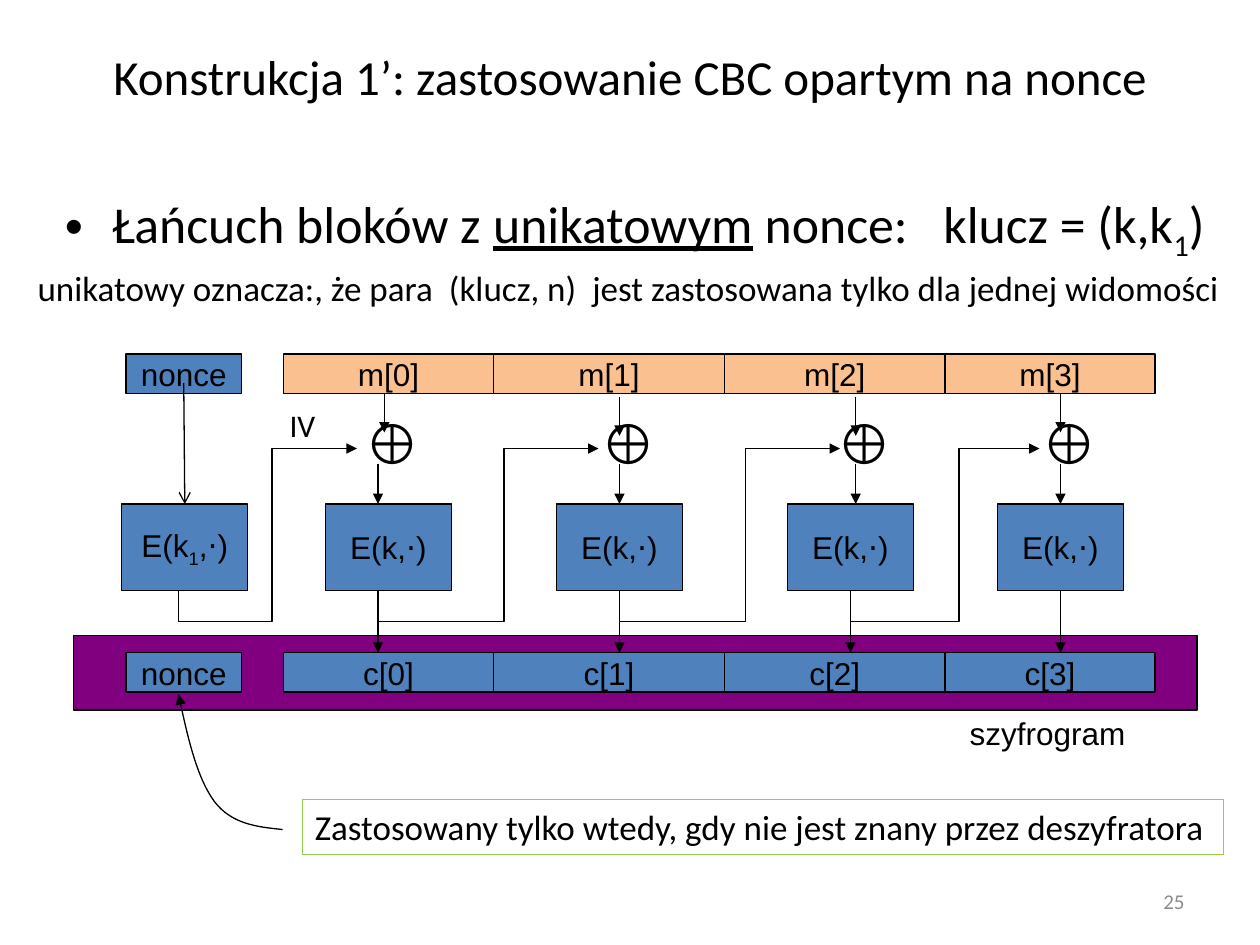
from dataclasses import dataclass
from lxml.etree import SubElement
from pptx import Presentation
from pptx.dml.color import RGBColor
from pptx.enum.shapes import MSO_CONNECTOR as Connector, MSO_SHAPE as Shape
from pptx.enum.text import MSO_ANCHOR as Anchor, MSO_AUTO_SIZE as AutoSize, PP_ALIGN as Align
from pptx.oxml.ns import qn
from pptx.util import Pt

BLUE, ORANGE, PURPLE, GREEN = "4F81BD", "FAC090", "800080", "92D050"
BLACK, GREY = "000000", "8C8C8C"
BLOCK_TOP, BLOCK_HEIGHT, BLOCK_WIDTH = 288, 49.5, 72
CELL_HEIGHT, MESSAGE_TOP, CIPHER_TOP = 22.5, 202.3, 373
XOR_LEVEL, FEED_LEVEL = 256.3, 355.2


@dataclass
class Span:
    text: str
    underline: bool = False
    subscript: bool = False
    spacing: float = 0


@dataclass
class Frame:
    left: float
    top: float
    width: float
    height: float


@dataclass
class Stage:
    """One column of the chain; all values are horizontal places."""
    cell_left: float
    cell_width: float
    block_left: float
    xor_left: float
    message_x: float
    message_y: float
    block_x: float
    cipher_x: float


STAGES = [
    Stage(162, 120, 186, 201, 219.6, 224.8, 216, 216),
    Stage(282, 132, 318, 336, 354, 226.8, 354, 354),
    Stage(414, 126, 450, 471, 489, 226.8, 489, 486),
    Stage(540, 120, 570, 588, 606, 224.8, 606, 606),
]


def colour(value: str) -> RGBColor:
    return RGBColor.from_string(value)


def write(box, spans: list[Span], size: float, font: str = "Arial", ink: str = BLACK,
          align=Align.LEFT, anchor=Anchor.TOP, wrap: bool = False, grow: bool = False):
    frame = box.text_frame
    frame.word_wrap = wrap
    frame.vertical_anchor = anchor
    frame.auto_size = AutoSize.SHAPE_TO_FIT_TEXT if grow else AutoSize.NONE
    para = frame.paragraphs[0]
    para.alignment = align
    for span in spans:
        run = para.add_run()
        run.text = span.text
        run.font.size, run.font.name = Pt(size), font
        run.font.color.rgb = colour(ink)
        run.font.underline = span.underline
        if span.subscript:
            run.font._element.set("baseline", "-25000")
        if span.spacing:
            run.font._element.set("spc", str(round(span.spacing * 100)))
    return para


def add_label(page, frame: Frame, spans: list[Span], size: float, **style):
    box = page.shapes.add_textbox(Pt(frame.left), Pt(frame.top), Pt(frame.width), Pt(frame.height))
    return write(box, spans, size, **style)


def add_box(page, frame: Frame, fill: str | None, line: str = BLACK):
    box = page.shapes.add_shape(Shape.RECTANGLE, Pt(frame.left), Pt(frame.top),
                                Pt(frame.width), Pt(frame.height))
    box.shadow.inherit = False
    if fill:
        box.fill.solid()
        box.fill.fore_color.rgb = colour(fill)
    else:
        box.fill.background()
    box.line.color.rgb, box.line.width = colour(line), Pt(0.75)
    return box


def add_block(page, frame: Frame, fill: str, *spans: Span) -> None:
    write(add_box(page, frame, fill), list(spans), 18, align=Align.CENTER, anchor=Anchor.MIDDLE)


def style_line(line, head: str | None) -> None:
    line.color.rgb, line.width = colour(BLACK), Pt(0.75)
    if head:
        SubElement(line._get_or_add_ln(), qn("a:tailEnd"), type=head)


def add_line(page, x1: float, y1: float, x2: float, y2: float, head: str | None = "triangle") -> None:
    link = page.shapes.add_connector(Connector.STRAIGHT, Pt(x1), Pt(y1), Pt(x2), Pt(y2))
    style_line(link.line, head)
    SubElement(link._element.spPr, qn("a:effectLst"))


def add_route(page, points: list[tuple[float, float]]):
    """Draw an open outline through the points, ending in an arrowhead."""
    start, *others = [(Pt(x), Pt(y)) for x, y in points]
    builder = page.shapes.build_freeform(*start)
    builder.add_line_segments(others, close=False)
    route = builder.convert_to_shape()
    route.shadow.inherit = False
    route.fill.background()
    style_line(route.line, "triangle")
    return route


def add_elbow(page, start: float, turn: float, end: float) -> None:
    add_route(page, [(start, FEED_LEVEL), (turn, FEED_LEVEL), (turn, XOR_LEVEL), (end, XOR_LEVEL)])


def add_curve(page, points: list[tuple[float, float]]) -> None:
    """Turn each three points after the first into one cubic Bezier segment."""
    outline = add_route(page, points)._element.find(".//" + qn("a:path"))
    steps = outline.findall(qn("a:lnTo"))
    for index in range(0, len(steps), 3):
        bezier = SubElement(outline, qn("a:cubicBezTo"))
        for step in steps[index:index + 3]:
            bezier.append(step[0])
            outline.remove(step)


def add_texts(page) -> None:
    add_label(page, Frame(36, 21.6, 648, 44), [Span("Konstrukcja 1’: zastosowanie CBC opartym na nonce")],
              28, font="Calibri", align=Align.CENTER, anchor=Anchor.MIDDLE, wrap=True)
    add_label(page, Frame(516, 500.5, 168, 28.8), [Span("25")], 12, font="Calibri", ink=GREY,
              align=Align.RIGHT, anchor=Anchor.MIDDLE, wrap=True)
    heading = add_label(page, Frame(30, 106, 690, 72), [
        Span("Łańcuch bloków z "), Span("unikatowym", underline=True), Span(" nonce:"),
        Span(" ", spacing=13.4), Span("klucz = (k,k"), Span("1", subscript=True), Span(")"),
    ], 29.6, font="Calibri", wrap=True)
    heading.space_before = Pt(6)
    props = heading._p.get_or_add_pPr()
    props.set("marL", str(Pt(27)))
    props.set("indent", str(-Pt(27)))
    SubElement(props, qn("a:buFont"), typeface="Arial")
    SubElement(props, qn("a:buChar"), char="•")
    wide = Span(" ", spacing=4.5)
    add_label(page, Frame(14.4, 148.5, 705.6, 31.5), [
        Span("unikatowy oznacza:, że para"), wide, Span("(klucz, n)"), wide,
        Span("jest zastosowana tylko dla jednej widomości"),
    ], 20, font="Calibri", wrap=True, grow=True)
    add_label(page, Frame(547, 404.6, 104.5, 29), [Span("szyfrogram")], 18, grow=True)
    add_label(page, Frame(158.4, 228.5, 29.5, 29), [Span("IV")], 18, font="Calibri", grow=True)


def add_stage(page, index: int, stage: Stage) -> None:
    for name, top, fill in (("m", MESSAGE_TOP, ORANGE), ("c", CIPHER_TOP, BLUE)):
        add_block(page, Frame(stage.cell_left, top, stage.cell_width, CELL_HEIGHT),
                  fill, Span(f"{name}[{index}]"))
    add_block(page, Frame(stage.block_left, BLOCK_TOP, BLOCK_WIDTH, BLOCK_HEIGHT), BLUE, Span("E(k,⋅)"))
    add_label(page, Frame(stage.xor_left, 229.7, 39.6, 46), [Span("⊕")], 32, grow=True)
    add_line(page, stage.message_x, stage.message_y, stage.message_x, stage.message_y + 22.3)
    add_line(page, stage.block_x, 265, stage.block_x, BLOCK_TOP)
    add_line(page, stage.cipher_x, BLOCK_TOP + BLOCK_HEIGHT, stage.cipher_x, CIPHER_TOP)


def add_nonce(page) -> None:
    for top in (MESSAGE_TOP, CIPHER_TOP):
        add_block(page, Frame(72, top, 66, CELL_HEIGHT), BLUE, Span("nonce"))
    add_block(page, Frame(69.6, BLOCK_TOP, BLOCK_WIDTH, BLOCK_HEIGHT), BLUE,
              Span("E(k"), Span("1", subscript=True), Span(",⋅)"))
    add_line(page, 105, 219, 105.6, BLOCK_TOP, "arrow")
    add_line(page, 102, BLOCK_TOP + BLOCK_HEIGHT, 102, FEED_LEVEL, None)


def add_note(page) -> None:
    note = add_box(page, Frame(172.8, 457, 526.3, 31.5), None, GREEN)
    write(note, [Span("Zastosowany tylko wtedy, gdy nie jest znany przez deszyfratora")], 20,
          font="Calibri", grow=True)
    add_curve(page, [(161.5, 474), (147, 472.5), (132.5, 471), (122.5, 458),
                     (113, 445), (107, 420.5), (102, 396.7)])


def main() -> None:
    deck = Presentation()
    deck.slide_width, deck.slide_height = Pt(720), Pt(540)
    page = deck.slides.add_slide(deck.slide_layouts[6])
    add_texts(page)
    add_box(page, Frame(42, 363.3, 642, 42.5), PURPLE)
    for index, stage in enumerate(STAGES):
        add_stage(page, index, stage)
    add_nonce(page)
    for start, turn, end in ((102, 155.5, 204), (216, 288, 342), (354, 426, 480), (486, 548, 594)):
        add_elbow(page, start, turn, end)
    add_note(page)
    deck.save("out.pptx")


if __name__ == "__main__":
    main()
